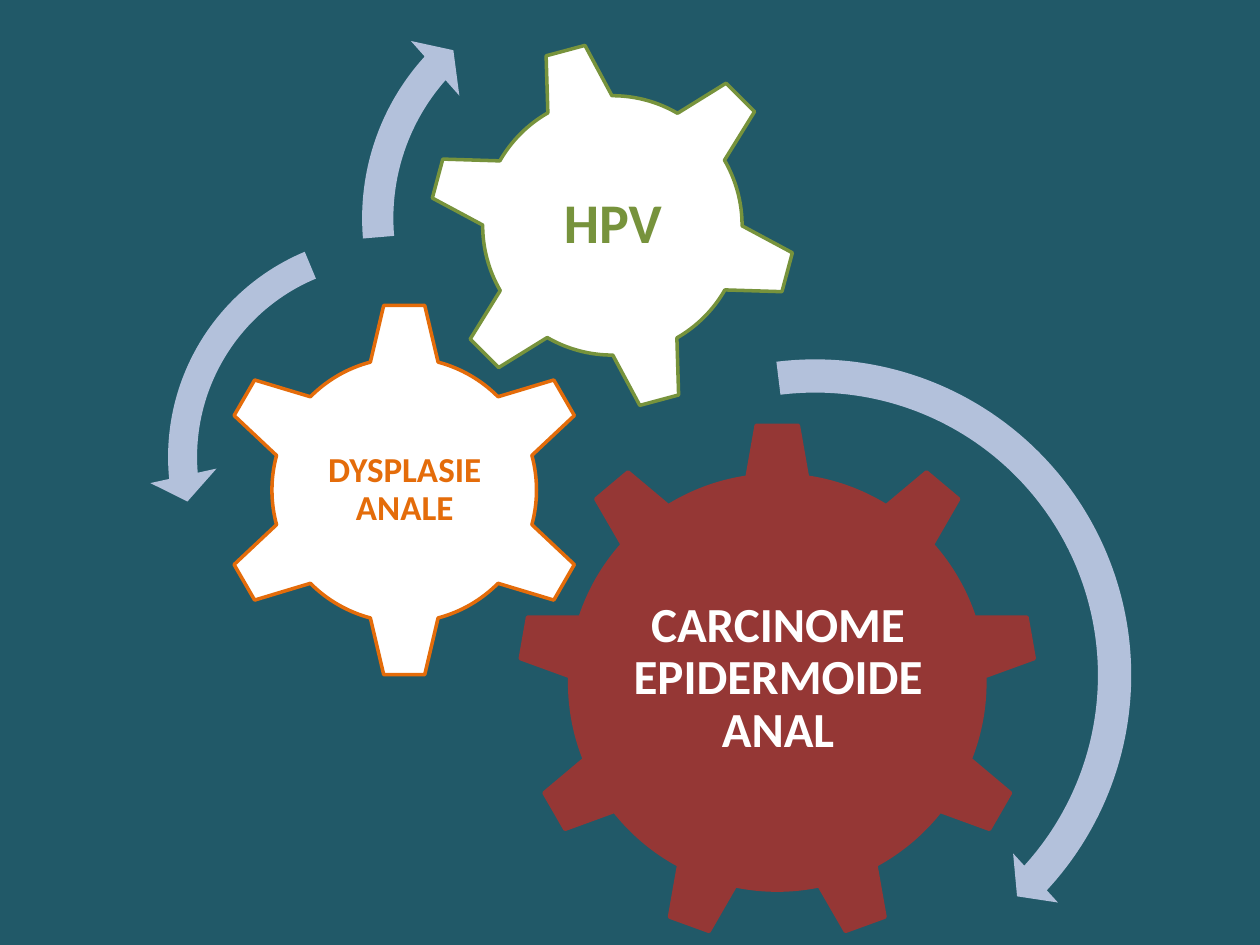
"""Build a slide of three interlocking gears with rotation arrows."""
import pptx
import pptx.dml.color
import pptx.enum.shapes
import pptx.enum.text
import pptx.util

Cm = pptx.util.Cm
Pt = pptx.util.Pt
SHAPES = pptx.enum.shapes.MSO_SHAPE


def color(hex_string):
    """Return the colour for a hex string."""
    return pptx.dml.color.RGBColor.from_string(hex_string)


def write_text(frame, text, *, size, fill, font="Calibri", bold=True, margin=0.1):
    """Write one centred, formatted paragraph into a text frame."""
    frame.word_wrap = True
    frame.vertical_anchor = pptx.enum.text.MSO_ANCHOR.MIDDLE
    frame.margin_left = frame.margin_right = Cm(margin)
    frame.margin_top = frame.margin_bottom = Cm(margin)
    paragraph = frame.paragraphs[0]
    paragraph.alignment = pptx.enum.text.PP_ALIGN.CENTER
    paragraph.line_spacing = 0.9
    run = paragraph.add_run()
    run.text = text
    run.font.name = font
    run.font.size = Pt(size)
    run.font.bold = bold
    run.font.color.rgb = color(fill)


class GearSlide:
    """Hold the style and the current slide."""

    background = "215968"
    arrow_fill = "B3C1DB"
    outline_width = 2

    def __init__(self, presentation):
        """Add a blank slide with the background colour."""
        self.slide = presentation.slides.add_slide(presentation.slide_layouts[6])
        self.slide.background.fill.solid()
        self.slide.background.fill.fore_color.rgb = color(self.background)

    def add_square_shape(self, kind, left, top, size, fill):
        """Add a filled preset shape as wide as it is high."""
        shape = self.slide.shapes.add_shape(kind, Cm(left), Cm(top), Cm(size), Cm(size))
        shape.shadow.inherit = False
        shape.fill.solid()
        shape.fill.fore_color.rgb = color(fill)
        return shape

    def add_gear(self, kind, left, top, size, *, fill, line, rotation=0):
        """Add an outlined gear."""
        gear = self.add_square_shape(kind, left, top, size, fill)
        gear.line.color.rgb = color(line)
        gear.line.width = Pt(self.outline_width)
        gear.rotation = rotation

    def add_label(self, text, left, top, width, height, **text_format):
        """Add an upright label over a gear."""
        box = self.slide.shapes.add_textbox(Cm(left), Cm(top), Cm(width), Cm(height))
        write_text(box.text_frame, text, **text_format)

    def add_arrow(self, kind, left, top, size, *, thickness, tip, end, start, head):
        """Add a circular arrow, with its angles in degrees."""
        arrow = self.add_square_shape(kind, left, top, size, self.arrow_fill)
        arrow.line.fill.background()
        angles = [angle * 0.6 for angle in (tip, end, start)]
        for index, value in enumerate([thickness, *angles, head]):
            arrow.adjustments[index] = value


def main():
    """Build and save the presentation."""
    presentation = pptx.Presentation()
    presentation.slide_width = Cm(25.4)
    presentation.slide_height = Cm(19.05)
    slide = GearSlide(presentation)

    slide.add_gear(SHAPES.GEAR_9, 10.44, 8.53, 10.46, fill="953735", line="953735")
    slide.add_label("CARCINOME EPIDERMOIDE ANAL", 12.55, 11, 6.27, 5.38,
                    size=28, fill="FFFFFF")
    slide.add_gear(SHAPES.GEAR_6, 4.34, 6.07, 7.62, fill="FFFFFF", line="E46C0A")
    slide.add_label("DYSPLASIE ANALE", 6.27, 8, 3.78, 3.76, size=20, fill="E46C0A")
    slide.add_gear(SHAPES.GEAR_6, 8.61, 0.81, 7.47, fill="FFFFFF", line="77933C",
                   rotation=345)
    slide.add_label("HPV", 10.26, 2.44, 4.19, 4.19, size=32, fill="77933C")

    slide.add_arrow(SHAPES.CIRCULAR_ARROW, 9.73, 6.91, 13.41,
                    thickness=0.05, tip=4.98, end=42.61, start=262.94, head=0.05)
    slide.add_arrow(SHAPES.LEFT_CIRCULAR_ARROW, 3, 4.34, 9.75,
                    thickness=0.06, tip=7.17, end=174.82, start=247.3, head=0.07)
    slide.add_arrow(SHAPES.CIRCULAR_ARROW, 6.88, -0.86, 10.52,
                    thickness=0.06, tip=6.57, end=221.9, start=175.14, head=0.07)

    presentation.save("out.pptx")


if __name__ == "__main__":
    main()
